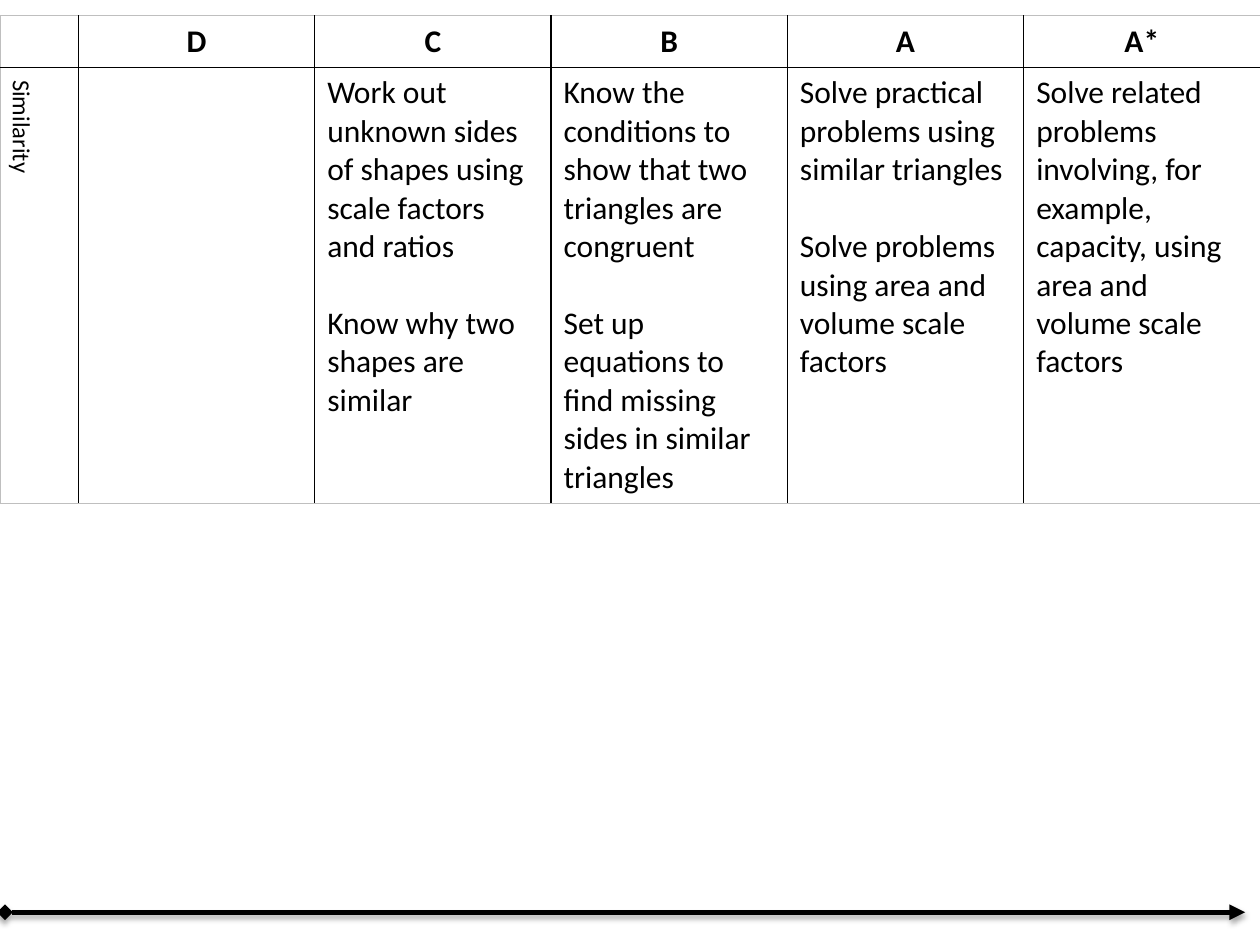
from lxml import etree
from pptx import Presentation
from pptx.dml.color import RGBColor
from pptx.enum.shapes import MSO_CONNECTOR
from pptx.enum.text import PP_ALIGN
from pptx.oxml import parse_xml
from pptx.oxml.ns import nsdecls, qn
from pptx.util import Cm, Pt

BLACK = RGBColor(0x00, 0x00, 0x00)
GREY = RGBColor(0xBF, 0xBF, 0xBF)
CENTER = PP_ALIGN.CENTER
LEFT = PP_ALIGN.LEFT
STRAIGHT = MSO_CONNECTOR.STRAIGHT
FONT = "Calibri"

GRADES = ["D", "C", "B", "A", "A*"]
TOPIC = "Similarity"
OBJECTIVES = [
    [],
    ["Work out unknown sides of shapes using scale factors and ratios",
     "Know why two shapes are similar"],
    ["Know the conditions to show that two triangles are congruent",
     "Set up equations to find missing sides in similar triangles"],
    ["Solve practical problems using similar triangles",
     "Solve problems using area and volume scale factors"],
    ["Solve related problems involving, for example, capacity, using area and volume scale factors"],
]


def fill_cell(cell, texts, size=18, bold=False, align=LEFT):
    for index, text in enumerate(texts):
        frame = cell.text_frame
        para = frame.add_paragraph() if index else frame.paragraphs[0]
        para.alignment = align
        if index:
            para.space_before = Pt(22)
        span = para.add_run()
        span.text = text
        span.font.name = FONT
        span.font.size = Pt(size)
        span.font.bold = bold
        span.font.color.rgb = BLACK


def add_border(cell, side, color, width):
    cell._tc.get_or_add_tcPr().append(parse_xml(
        f'<a:{side} {nsdecls("a")} w="{Pt(width)}"><a:solidFill>'
        f'<a:srgbClr val="{color}"/></a:solidFill></a:{side}>'))


deck = Presentation()
deck.slide_width = Cm(25.4)
deck.slide_height = Cm(19.05)
page = deck.slides.add_slide(deck.slide_layouts[6])

arrow = page.shapes.add_connector(STRAIGHT, Cm(0.1), Cm(18.39), Cm(25.1), Cm(18.39))
arrow.line.color.rgb = BLACK
arrow.line.width = Pt(3)
outline = arrow.line._get_or_add_ln()
etree.SubElement(outline, qn("a:headEnd"), type="diamond")
etree.SubElement(outline, qn("a:tailEnd"), type="triangle")
arrow._element.spPr.append(parse_xml(
    f'<a:effectLst {nsdecls("a")}><a:outerShdw blurRad="{Pt(3.1)}" dist="{Pt(1.8)}" '
    f'dir="5400000" rotWithShape="0"><a:srgbClr val="{BLACK}"><a:alpha val="35000"/>'
    '</a:srgbClr></a:outerShdw></a:effectLst>'))

row_count, column_count = 2, len(GRADES) + 1
topic_width = Cm(1.58)
grid = page.shapes.add_table(
    row_count, column_count, 0, Cm(0.32), deck.slide_width, Cm(9.8)).table
grid.first_row = False
grid.horz_banding = False
grid.rows[0].height = Cm(1.04)
grid.rows[1].height = Cm(8.76)
for index, column in enumerate(grid.columns):
    column.width = (deck.slide_width - topic_width) // len(GRADES) if index else topic_width

for row in range(row_count):
    for column in range(column_count):
        cell = grid.cell(row, column)
        outer_sides = {"lnL": column == 0, "lnR": column == column_count - 1,
                       "lnT": row == 0, "lnB": row == row_count - 1}
        for side, is_outer in outer_sides.items():
            add_border(cell, side, GREY if is_outer else BLACK, 0.5 if is_outer else 1)
        cell.fill.background()

for column, (grade, objectives) in enumerate(zip(GRADES, OBJECTIVES), start=1):
    fill_cell(grid.cell(0, column), [grade], bold=True, align=CENTER)
    fill_cell(grid.cell(1, column), objectives)

topic_cell = grid.cell(1, 0)
fill_cell(topic_cell, [TOPIC], size=14)
topic_cell._tc.get_or_add_tcPr().set("vert", "vert")

deck.save("out.pptx")
